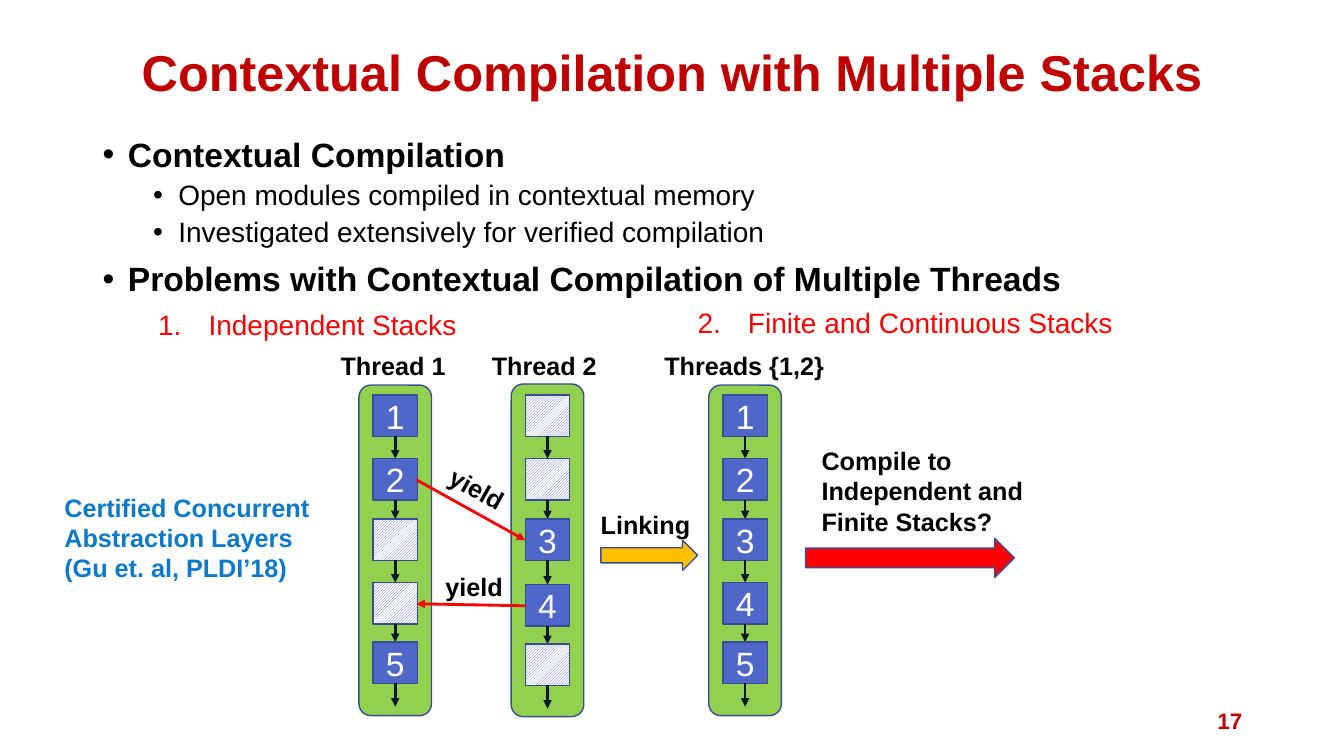
from lxml import etree
from pptx import Presentation
from pptx.dml.color import RGBColor
from pptx.enum.dml import MSO_PATTERN
from pptx.enum.shapes import MSO_CONNECTOR, MSO_SHAPE
from pptx.enum.text import MSO_ANCHOR, MSO_AUTO_SIZE, PP_ALIGN
from pptx.oxml.ns import qn
from pptx.util import Pt

PX = 9144  # EMU per px, 100 px to the inch
FONT = "Arial"
LEFT, CENTER, RIGHT = PP_ALIGN.LEFT, PP_ALIGN.CENTER, PP_ALIGN.RIGHT
TOP, MIDDLE = MSO_ANCHOR.TOP, MSO_ANCHOR.MIDDLE
RECT, ROUNDED = MSO_SHAPE.RECTANGLE, MSO_SHAPE.ROUNDED_RECTANGLE
RIGHT_ARROW = MSO_SHAPE.RIGHT_ARROW
STRAIGHT = MSO_CONNECTOR.STRAIGHT
HATCH = MSO_PATTERN.LIGHT_UPWARD_DIAGONAL
COLORS = {
    "heading": "C00000", "text": "000000", "white": "FFFFFF",
    "red": "FF0000", "citation": "0D79CA", "stack": "92D050",
    "frame": "4E67C8", "outline": "3A4C94", "flow": "031828",
    "link": "FFC000",
}
BOX_W, BOX_H, STACK_W = 44, 41, 72


def rgb(name):
    return RGBColor.from_string(COLORS[name])


class StackSlide:
    def __init__(self, presentation):
        self.slide = presentation.slides.add_slide(presentation.slide_layouts[5])
        self.shapes = self.slide.shapes

    def style(self, paragraph, size, color, bold=False, align=LEFT):
        paragraph.alignment = align
        font = paragraph.font
        font.name, font.size, font.bold = FONT, Pt(size), bold
        font.color.rgb = rgb(color)

    def title(self, text, x, y, w, h):
        title = self.shapes.title
        title.left, title.top, title.width, title.height = (
            v * PX for v in (x, y, w, h))
        frame = title.text_frame
        frame.text = text
        frame.vertical_anchor = MIDDLE
        frame.auto_size = MSO_AUTO_SIZE.NONE
        heading = frame.paragraphs[0]
        heading.line_spacing = 0.9
        self.style(heading, 36, "heading", True, CENTER)

    def text(self, text, x, y, w, h=40, size=18, color="text", bold=True,
             align=LEFT, anchor=TOP, rotation=0):
        """Add a text box and return its paragraphs, one for each line."""
        box = self.shapes.add_textbox(x * PX, y * PX, w * PX, h * PX)
        box.rotation = rotation
        frame = box.text_frame
        frame.word_wrap = True
        frame.vertical_anchor = anchor
        frame.text = text
        for paragraph in frame.paragraphs:
            self.style(paragraph, size, color, bold, align)
        return frame.paragraphs

    def marker(self, paragraph, margin, hanging, tag, **attributes):
        """Give a paragraph a hanging bullet or number."""
        properties = paragraph._p.get_or_add_pPr()
        properties.set("marL", str(margin * PX))
        properties.set("indent", str(-hanging * PX))
        mark = etree.Element(qn(tag), attributes)
        font = etree.Element(qn("a:buFont"), typeface=FONT)
        defaults = properties.find(qn("a:defRPr"))
        defaults.addprevious(font)
        defaults.addprevious(mark)

    def bullets(self, items, x, y, w, h):
        """Add a list of (level, text) items."""
        lines = self.text("\n".join(text for _, text in items), x, y, w, h)
        for (level, _), line in zip(items, lines):
            line.level = level
            self.style(line, 20 if level else 24, "text", not level)
            line.line_spacing = 0.9
            line.space_before = Pt(5 if level else 10)
            self.marker(line, 25 + 50 * level, 25, "a:buChar", char="•")

    def numbered(self, number, text, x, y, w):
        line = self.text(text, x, y, w, 44, 20, "red", False)[0]
        self.marker(line, 50, 50, "a:buAutoNum", type="arabicPeriod",
                    startAt=str(number))

    def shape(self, kind, x, y, w, h, fill):
        shape = self.shapes.add_shape(kind, x * PX, y * PX, w * PX, h * PX)
        shape.shadow.inherit = False
        shape.line.color.rgb = rgb("outline")
        shape.line.width = Pt(1)
        shape.fill.solid()
        shape.fill.fore_color.rgb = rgb(fill)
        return shape

    def stack_frame(self, x, y, label):
        """Add a numbered box, or a hatched one where the label is empty."""
        box = self.shape(RECT, x, y, BOX_W, BOX_H, "frame")
        if label:
            box.text_frame.text = label
            box.text_frame.vertical_anchor = MIDDLE
            self.style(box.text_frame.paragraphs[0], 24, "white", align=CENTER)
        else:
            box.fill.patterned()
            box.fill.pattern = HATCH
            box.fill.fore_color.rgb = rgb("frame")
            box.fill.back_color.rgb = rgb("white")

    def arrow(self, x1, y1, x2, y2, color):
        arrow = self.shapes.add_connector(
            STRAIGHT, x1 * PX, y1 * PX, x2 * PX, y2 * PX)
        arrow.line.color.rgb = rgb(color)
        arrow.line.width = Pt(2)
        etree.SubElement(arrow.line._get_or_add_ln(), qn("a:tailEnd"),
                         type="triangle")
        etree.SubElement(arrow._element.spPr, qn("a:effectLst"))

    def stack(self, x, y, h, labels, tops):
        self.shape(ROUNDED, x, y, STACK_W, h, "stack")
        center = x + STACK_W // 2
        ends = tops[1:] + [tops[-1] + BOX_H + 23]
        for label, top, end in zip(labels, tops, ends):
            self.stack_frame(center - BOX_W // 2, top, label)
            self.arrow(center, top + BOX_H, center, end, "flow")


def main():
    presentation = Presentation()
    presentation.slide_width, presentation.slide_height = 1333 * PX, 750 * PX
    page = StackSlide(presentation)

    page.title("Contextual Compilation with Multiple Stacks", 92, 40, 1150, 70)
    page.bullets([
        (0, "Contextual Compilation"),
        (1, "Open modules compiled in contextual memory"),
        (1, "Investigated extensively for verified compilation"),
        (0, "Problems with Contextual Compilation of Multiple Threads"),
    ], 92, 132, 1150, 551)
    page.text("17", 942, 695, 300, size=16, color="heading", align=RIGHT,
              anchor=MIDDLE)
    page.numbered(1, "Independent Stacks", 147, 300, 381)
    page.numbered(2, "Finite and Continuous Stacks", 682, 298, 479)

    tops = [392, 455, 515, 578, 637]
    page.stack(507, 381, 330, ["", "", "3", "4", ""], [392, 455, 515, 580, 639])
    page.stack(356, 382, 328, ["1", "2", "", "", "5"], tops)
    page.stack(703, 382, 328, ["1", "2", "3", "4", "5"], tops)
    page.text("Thread 1", 328, 343, 130)
    page.text("Thread 2", 478, 343, 130)
    page.text("Threads {1,2}", 649, 343, 179)

    page.arrow(413, 476, 521, 536, "red")
    page.arrow(521, 601, 413, 599, "red")
    page.text("yield", 433, 472, 107, rotation=29.1)
    page.text("yield", 432, 562, 107)

    page.text("Linking", 586, 500, 130)
    page.shape(RIGHT_ARROW, 596, 536, 96, 30, "link")
    page.text("Compile to Independent and Finite Stacks?", 805, 437, 270, 101)
    page.shape(RIGHT_ARROW, 799, 534, 207, 39, "red")
    page.text("Certified Concurrent\nAbstraction Layers\n(Gu et. al, PLDI’18)",
              54, 483, 270, 101, color="citation")

    presentation.save("out.pptx")


if __name__ == "__main__":
    main()
